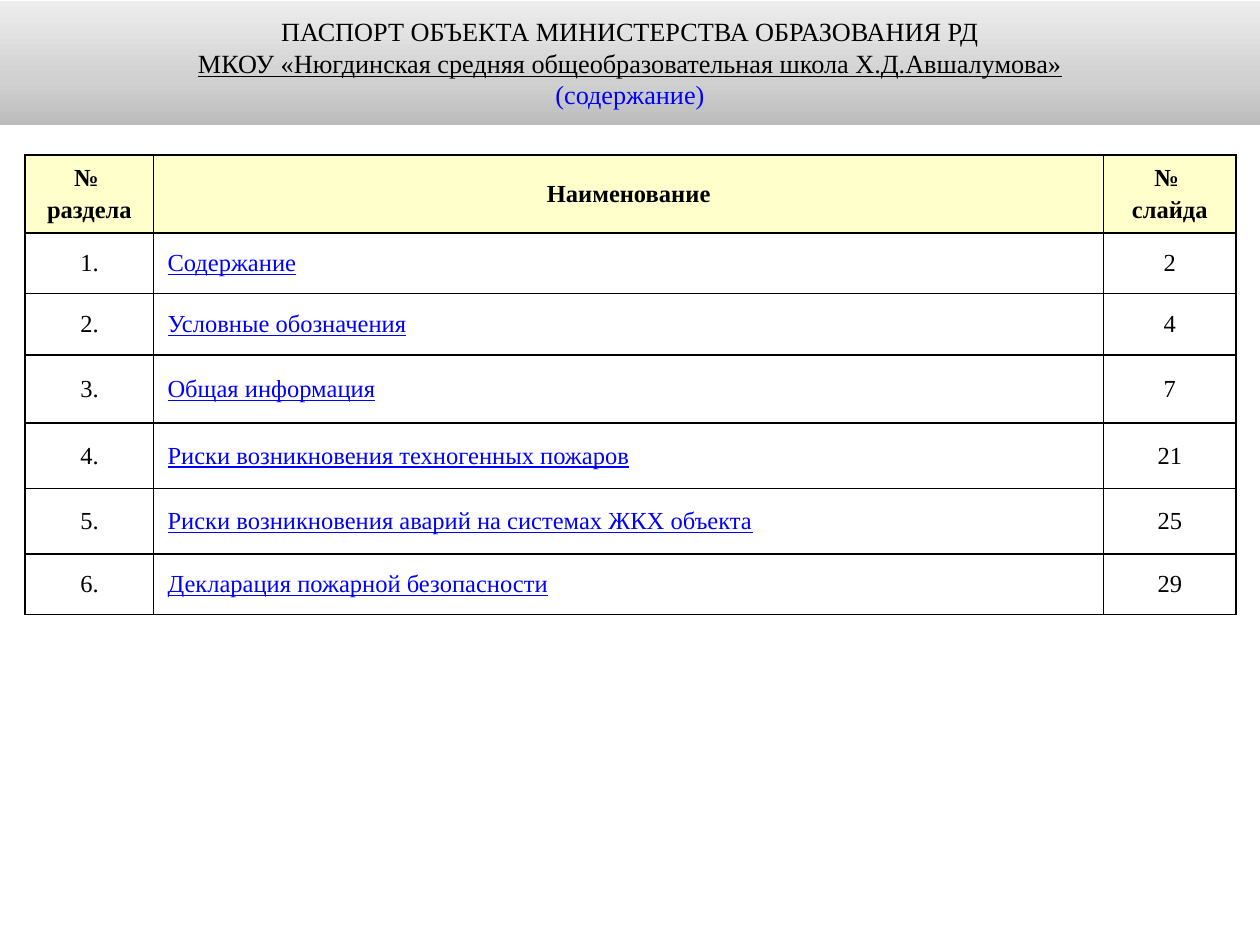
from dataclasses import dataclass

from lxml import etree
from pptx import Presentation
from pptx import util as u
from pptx.dml.color import RGBColor
from pptx.enum import text
from pptx.oxml import ns

PX = 9144


@dataclass(frozen=True)
class Theme:
    """Colours, font and type sizes of the deck."""
    font: str = "Times New Roman"
    ink: str = "000000"
    link: str = "0000FF"
    header: str = "FFFFCC"
    paper: str = "FFFFFF"
    band: tuple = ((0, "BCBCBC"), (35, "D0D0D0"), (100, "EDEDED"))
    title_size: int = 15
    table_size: int = 14
    border: int = 1


THEME = Theme()
TITLE = [
    ("ПАСПОРТ ОБЪЕКТА МИНИСТЕРСТВА ОБРАЗОВАНИЯ РД", THEME.ink, False),
    ("МКОУ «Нюгдинская средняя общеобразовательная школа Х.Д.Авшалумова»", THEME.ink, True),
    ("(содержание)", THEME.link, False),
]
HEADER = ("№ \nраздела", "Наименование", "№ \nслайда")
SECTIONS = [
    ("Содержание", 2),
    ("Условные обозначения", 4),
    ("Общая информация", 7),
    ("Риски возникновения техногенных пожаров", 21),
    ("Риски возникновения аварий на системах ЖКХ объекта", 25),
    ("Декларация пожарной безопасности", 29),
]
COLUMNS = (102, 754, 105)
ROWS = (62, 48, 49, 54, 52, 52, 48)


def add_element(parent, tag, **attributes):
    """Append a DrawingML child and return it."""
    return etree.SubElement(parent, ns.qn(tag), attributes)


def style_paragraph(para, size, colour, bold=False, underline=False, align=text.PP_ALIGN.CENTER):
    """Format the paragraph and all its runs."""
    para.alignment = align
    for span in para.runs:
        span.font.name = THEME.font
        span.font.size = u.Pt(size)
        span.font.bold = bold
        span.font.underline = underline
        span.font.color.rgb = RGBColor.from_string(colour)


def fill_gradient(shape, stops, angle):
    """Fill the shape with a linear gradient."""
    gradient = add_element(shape.element.spPr, "a:gradFill", rotWithShape="1")
    stop_list = add_element(gradient, "a:gsLst")
    for position, colour in stops:
        stop = add_element(stop_list, "a:gs", pos=str(position * 1000))
        add_element(stop, "a:srgbClr", val=colour)
    add_element(gradient, "a:lin", ang=str(angle * 60000), scaled="0")


def add_title(page, left, top, width, height):
    """Place the title band in the given box."""
    title = page.shapes.title
    title.left, title.top = left * PX, top * PX
    title.width, title.height = width * PX, height * PX
    fill_gradient(title, THEME.band, 270)
    frame = title.text_frame
    frame.text = "\n".join(line for line, _, _ in TITLE)
    frame.word_wrap = True
    frame.auto_size = text.MSO_AUTO_SIZE.NONE
    frame.vertical_anchor = text.MSO_ANCHOR.MIDDLE
    for para, (_, colour, underline) in zip(frame.paragraphs, TITLE):
        style_paragraph(para, THEME.title_size, colour, underline=underline)


def add_borders(cell):
    """Draw a thin line on every side of the cell."""
    properties = cell._tc.get_or_add_tcPr()
    for side in ("a:lnL", "a:lnR", "a:lnT", "a:lnB"):
        line = add_element(properties, side, w=str(u.Pt(THEME.border)))
        add_element(add_element(line, "a:solidFill"), "a:srgbClr", val=THEME.ink)


def fill_cell(cell, words, is_header, is_link):
    """Write and format one table cell."""
    add_borders(cell)
    cell.fill.solid()
    cell.fill.fore_color.rgb = RGBColor.from_string(THEME.header if is_header else THEME.paper)
    cell.margin_left = cell.margin_right = 11 * PX
    cell.margin_top = cell.margin_bottom = 5 * PX
    cell.vertical_anchor = text.MSO_ANCHOR.MIDDLE
    cell.text_frame.text = words
    for index, para in enumerate(cell.text_frame.paragraphs):
        style_paragraph(
            para, THEME.table_size, THEME.link if is_link else THEME.ink, is_header, is_link,
            text.PP_ALIGN.LEFT if is_link else text.PP_ALIGN.CENTER)
        if index:
            para.space_before = u.Pt(3)


def add_contents(page, left, top):
    """Place the table of contents with its corner at the given point."""
    records = [HEADER] + [
        (f"{number}.", name, str(slide)) for number, (name, slide) in enumerate(SECTIONS, 1)]
    table = page.shapes.add_table(
        len(ROWS), len(COLUMNS), left * PX, top * PX, sum(COLUMNS) * PX, sum(ROWS) * PX).table
    for column, width in zip(table.columns, COLUMNS):
        column.width = width * PX
    for row_index, (row, height, record) in enumerate(zip(table.rows, ROWS, records)):
        row.height = height * PX
        for column_index, (cell, words) in enumerate(zip(row.cells, record)):
            is_header = row_index == 0
            fill_cell(cell, words, is_header, column_index == 1 and not is_header)


def main():
    """Build the contents slide and save the deck."""
    deck = Presentation()
    deck.slide_width, deck.slide_height = 1000 * PX, 750 * PX
    page = deck.slides.add_slide(deck.slide_layouts[5])
    add_title(page, 0, 1, 1000, 98)
    add_contents(page, 20, 123)
    deck.save("out.pptx")


if __name__ == "__main__":
    main()
